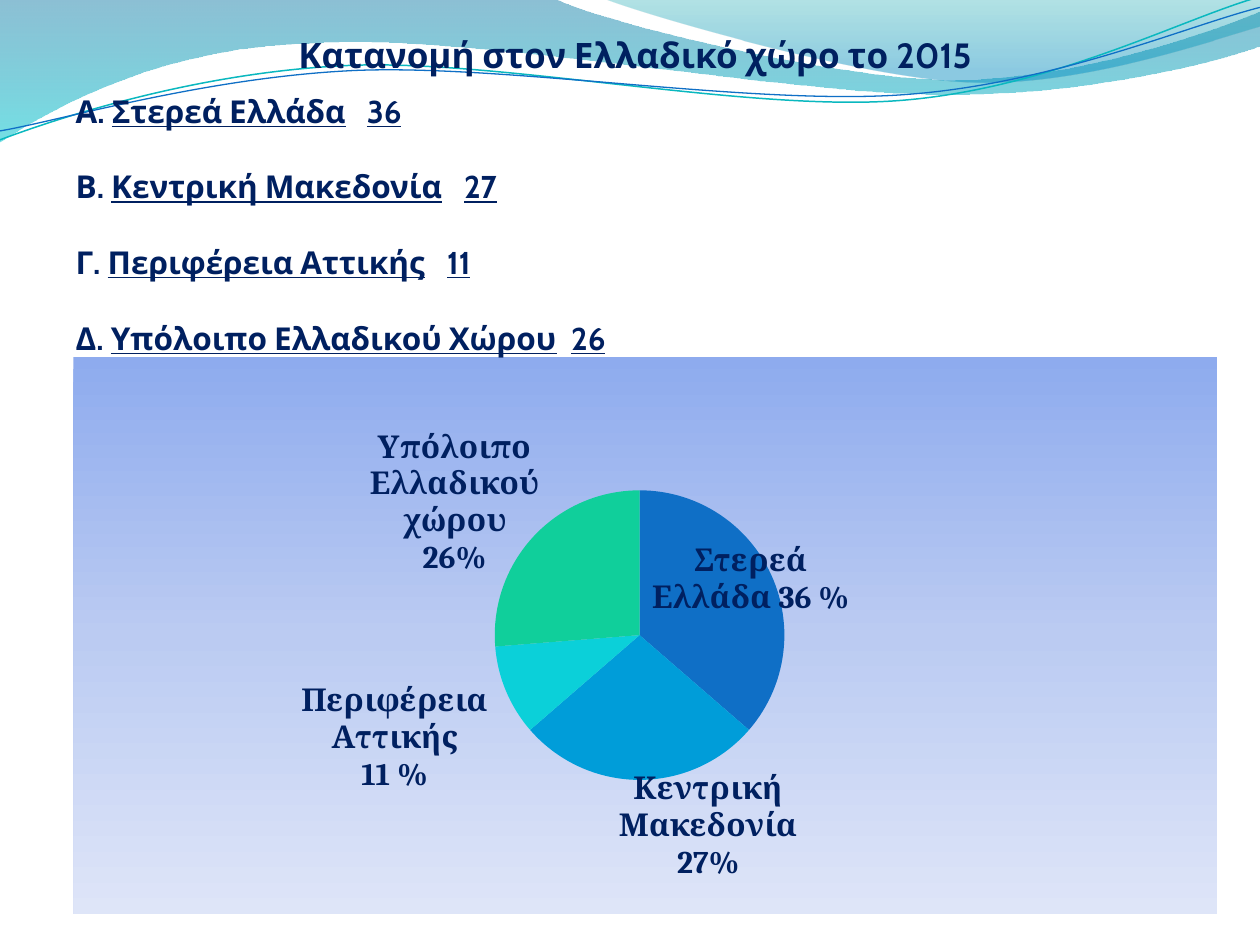
from lxml import etree
from pptx import Presentation
from pptx.chart.data import CategoryChartData
from pptx.dml.color import RGBColor
from pptx.enum.chart import XL_CHART_TYPE, XL_LABEL_POSITION
from pptx.enum.text import MSO_ANCHOR, MSO_AUTO_SIZE, PP_ALIGN
from pptx.oxml import parse_xml
from pptx.oxml.ns import nsdecls, qn
from pptx.util import Cm, Pt

PIE = XL_CHART_TYPE.PIE
OUTER = XL_LABEL_POSITION.OUTSIDE_END
TOP = MSO_ANCHOR.TOP
FIXED = MSO_AUTO_SIZE.NONE
LEFT = PP_ALIGN.LEFT
CENTER = PP_ALIGN.CENTER

NAVY = RGBColor(0x00, 0x20, 0x60)
BLUE = RGBColor(0x0F, 0x6F, 0xC6)
SKY = RGBColor(0x00, 0x9D, 0xD9)
CYAN = RGBColor(0x0B, 0xD0, 0xD9)
GREEN = RGBColor(0x10, 0xCF, 0x9B)
TEAL = RGBColor(0x0A, 0xB8, 0xBF)
DEEP = RGBColor(0x00, 0x74, 0xA1)
AQUA = RGBColor(0x00, 0xC6, 0xCF)
SEA = RGBColor(0x00, 0xA1, 0xA9)
OCEAN = RGBColor(0x00, 0x8B, 0xBF)
DUSK = RGBColor(0x8E, 0xAB, 0xEE)
HAZE = RGBColor(0xBB, 0xCB, 0xF2)
MIST = RGBColor(0xDE, 0xE5, 0xF8)

HEAD = "Κατανομή στον Ελλαδικό χώρο το 2015"
ITEMS = [
    ("Α. ", "Στερεά Ελλάδα\t36", 5.87),
    ("Β. ", "Κεντρική Μακεδονία\t27", 7.83),
    ("Γ. ", "Περιφέρεια Αττικής\t11", 7.49),
    ("Δ. ", "Υπόλοιπο Ελλαδικού Χώρου\t26", 9.99),
]
PARTS = [
    ("Στερεά Ελλάδα", 36, BLUE, ["Στερεά", "Ελλάδα 36 %"], (-0.11, 0.08)),
    ("Κεντρική Μακεδονία", 27, SKY,
     ["Κεντρική", "Μακεδονία", "27%"], (0.06, -0.03)),
    ("Περιφέρεια Αττικής", 10, CYAN,
     ["Περιφέρεια", "Αττικής", "11 %"], (-0.01, -0.02)),
    ("Υπόλοιπο Ελλαδικού χώρου", 26, GREEN,
     ["Υπόλοιπο", "Ελλαδικού", "χώρου", "26%"], (0.01, 0.08)),
]

BROAD = [
    [(0, 0)],
    [(11.18, -0.03)],
    [(12.09, 0.43), (16.87, 1.6), (19.25, 1.6)],
    [(21.67, 1.6), (24.33, 0.66), (25.4, 0.23)],
    [(25.43, 0.91)],
    [(24.97, 1.12), (22.1, 1.93), (18.95, 1.9)],
    [(15.8, 1.9), (9.7, 0.71), (6.53, 0.86)],
    [(3.28, 0.91), (1.17, 2.11), (-0.03, 2.87)],
]
SMALL = [
    [(12.17, -0.03)],
    [(12.93, 0.28), (17.32, 1.57), (19.53, 1.65)],
    [(21.74, 1.75), (24.41, 0.81), (25.4, 0.53)],
    [(25.4, 0)],
]
UPPER = [
    [(0, 2.82)],
    [(1.22, 2.36), (4.01, 1.45), (7.04, 1.32)],
    [(10.03, 1.19), (15.06, 2.26), (18.11, 2.03)],
    [(21.16, 1.8), (23.83, 0.38), (25.35, -0.05)],
]
LOWER = [
    [(0, 2.64)],
    [(1.19, 2.44), (4.17, 1.55), (7.19, 1.42)],
    [(10.24, 1.3), (15.16, 2.13), (18.21, 1.91)],
    [(21.23, 1.7), (23.9, 0.53), (25.4, 0.15)],
]


def make_grad(stops):
    grad = parse_xml(f'<a:gradFill {nsdecls("a")} rotWithShape="1"><a:gsLst/>'
                     '<a:lin ang="5400000" scaled="0"/></a:gradFill>')
    for place, color, alpha in stops:
        stop = etree.SubElement(grad[0], qn("a:gs"), pos=str(place * 1000))
        tone = etree.SubElement(stop, qn("a:srgbClr"), val=str(color))
        etree.SubElement(tone, qn("a:alpha"), val=str(alpha * 1000))
    return grad


def bend(shape, route):
    edges = iter(shape.element.xpath(".//a:lnTo"))
    for leg in route[1:]:
        group = [next(edges) for _ in leg]
        if len(group) == 3:
            curve = etree.Element(qn("a:cubicBezTo"))
            group[0].addprevious(curve)
            for edge in group:
                curve.append(edge[0])
                edge.getparent().remove(edge)


def trace(slide, route, close):
    spots = [(Cm(x), Cm(y)) for leg in route for x, y in leg]
    pen = slide.shapes.build_freeform(*spots[0])
    pen.add_line_segments(spots[1:], close=close)
    shape = pen.convert_to_shape()
    bend(shape, route)
    shape.shadow.inherit = False
    shape.fill.background()
    return shape


def add_wave(slide, route, stops):
    shape = trace(slide, route, True)
    shape.line.fill.background()
    blank = shape.element.xpath("p:spPr/a:noFill")[0]
    blank.getparent().replace(blank, make_grad(stops))


def add_curve(slide, route, color, width):
    line = trace(slide, route, False).line
    line.color.rgb = color
    line.width = Pt(width)


def add_run(para, text, face, size, under=None):
    run = para.add_run()
    run.text = text
    font = run.font
    font.name, font.size, font.bold = face, Pt(size), True
    font.color.rgb = NAVY
    font.underline = under


def add_item(title, mark, text, stop, gap):
    para = title.text_frame.add_paragraph()
    para.alignment = LEFT
    para.space_before = Pt(gap)
    add_run(para, mark, "Cabin", 18)
    add_run(para, text, "Cabin", 18, True)
    props = title.element.xpath(".//a:pPr")[-1]
    tabs = etree.SubElement(props, qn("a:tabLst"))
    etree.SubElement(tabs, qn("a:tab"), pos=str(Cm(stop)), algn="l")


def fill_title(title):
    title.left, title.top = Cm(1.27), Cm(0.43)
    title.width, title.height = Cm(23.06), Cm(8.13)
    frame = title.text_frame
    frame.auto_size, frame.vertical_anchor = FIXED, TOP
    frame.word_wrap = True
    frame.margin_top = Cm(0.25)
    para = frame.paragraphs[0]
    para.alignment = CENTER
    add_run(para, HEAD, "Cabin", 20)
    for spot, item in enumerate(ITEMS):
        add_item(title, *item, 21.6 if spot else 9.2)
    title.element.getparent().append(title.element)


def make_place(x, y, size=""):
    return parse_xml(f'<c:layout {nsdecls("c")}><c:manualLayout>{size}'
                     f'<c:x val="{x}"/><c:y val="{y}"/>'
                     '</c:manualLayout></c:layout>')


def set_plot(chart):
    area = chart.element.xpath("c:chart/c:plotArea")[0]
    for old in area.xpath("c:layout"):
        area.remove(old)
    place = make_place(0.36, 0.24, '<c:layoutTarget val="inner"/>'
                       '<c:xMode val="edge"/><c:yMode val="edge"/>')
    for tag, size in (("c:w", 0.27), ("c:h", 0.52)):
        etree.SubElement(place[0], qn(tag), val=str(size))
    area.insert(0, place)


def set_back(chart):
    back = parse_xml(f'<c:spPr {nsdecls("c", "a")}><a:ln><a:noFill/></a:ln></c:spPr>')
    back.insert(0, make_grad([(0, DUSK, 100), (50, HAZE, 100), (100, MIST, 100)]))
    chart.element.xpath("c:chart")[0].addnext(back)


def add_label(point, lines):
    label = point.data_label
    frame = label.text_frame
    frame.word_wrap = False
    for spot, line in enumerate(lines):
        para = frame.add_paragraph() if spot else frame.paragraphs[0]
        add_run(para, line, "Cambria", 18)
    label.position = OUTER


def add_pie(slide):
    data = CategoryChartData()
    data.categories = [part[0] for part in PARTS]
    data.add_series("Series 1", [part[1] for part in PARTS])
    chart = slide.shapes.add_chart(PIE, Cm(1.48), Cm(7.19), Cm(23.06),
                                   Cm(11.23), data).chart
    chart.has_legend = chart.has_title = False
    chart.font.name, chart.font.size = "Cambria", Pt(18)
    plot = chart.plots[0]
    plot.vary_by_categories = True
    for spot, (_, _, color, lines, _) in enumerate(PARTS):
        point = plot.series[0].points[spot]
        point.format.fill.solid()
        point.format.fill.fore_color.rgb = color
        point.format.line.fill.background()
        add_label(point, lines)
    for label, part in zip(chart.element.xpath(".//c:dLbl"), PARTS):
        label.insert(1, make_place(*part[4]))
    for lead in chart.element.xpath(".//c:showLeaderLines"):
        lead.set("val", "0")
    set_plot(chart)
    set_back(chart)


def main():
    deck = Presentation()
    deck.slide_width, deck.slide_height = Cm(25.4), Cm(19.05)
    slide = deck.slides.add_slide(deck.slide_layouts[5])
    add_wave(slide, BROAD, [(0, DEEP, 45), (100, AQUA, 55)])
    add_wave(slide, SMALL, [(0, SEA, 30), (80, OCEAN, 45)])
    add_curve(slide, UPPER, TEAL, 0.85)
    add_curve(slide, LOWER, BLUE, 0.75)
    add_pie(slide)
    fill_title(slide.shapes.title)
    deck.save("out.pptx")


if __name__ == "__main__":
    main()
